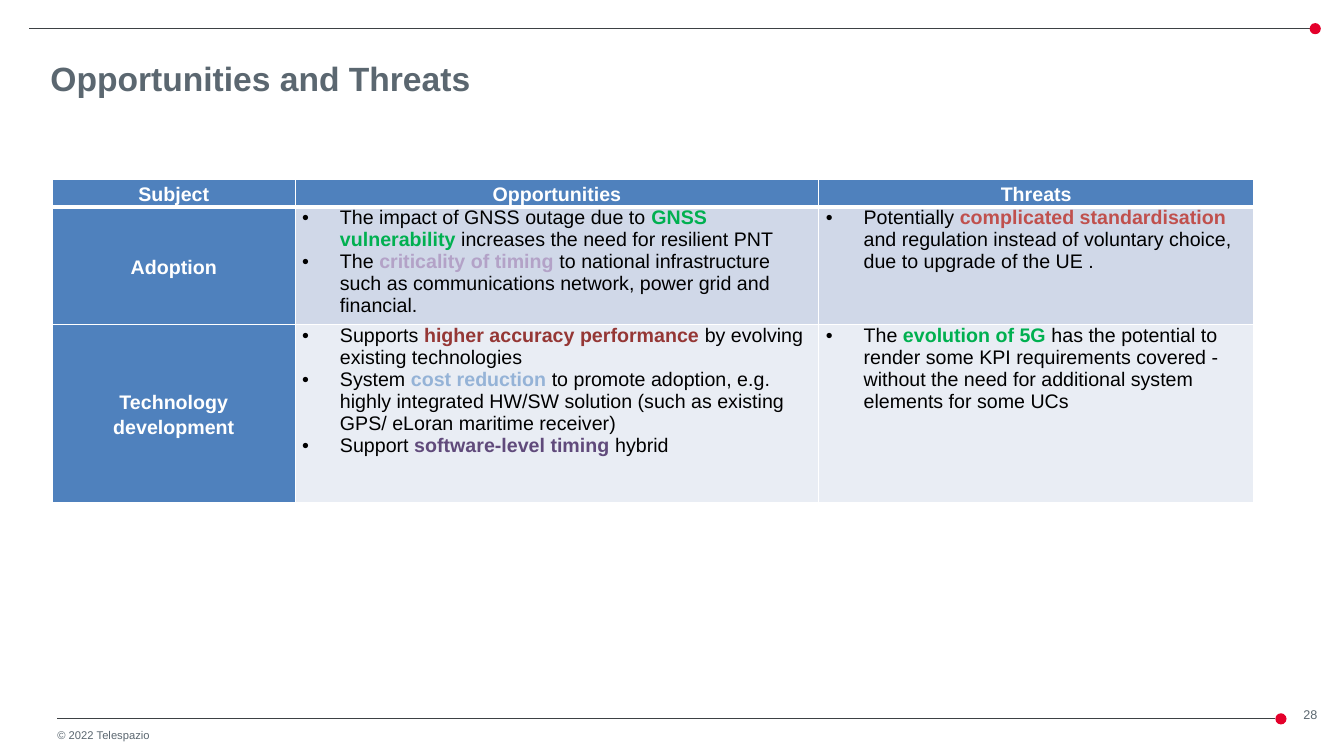
import pptx
import pptx.util
import pptx.dml.color
import pptx.enum.shapes
import pptx.enum.text
import pptx.oxml
import pptx.oxml.ns

Pt = pptx.util.Pt
ALIGN = pptx.enum.text.PP_ALIGN
ANCHOR = pptx.enum.text.MSO_ANCHOR
FONT = "Arial"
COLORS = {
    "grey": "5B6770", "rule": "3D4144", "dot": "E4002B", "white": "FFFFFF",
    "black": "000000", "header": "4F81BD", "band1": "D0D8E8", "band2": "E9EDF4",
    "green": "00B050", "lilac": "B3A2C7", "red": "C0504D", "maroon": "953735",
    "sky": "95B3D7", "purple": "604A7B",
}
DOT = 8
BULLET_INDENT = 27

HEADINGS = ["Subject", "Opportunities", "Threats"]
# Each bullet: text before, highlighted words, highlight colour, text after
SUBJECTS = [
    ("Adoption", "band1", 6, [
        [("The impact of GNSS outage due to ", "GNSS vulnerability", "green",
          " increases the need for resilient PNT"),
         ("The ", "criticality of timing ", "lilac",
          "to national infrastructure such as communications network, power grid and financial.")],
        [("Potentially ", "complicated standardisation ", "red",
          "and regulation instead of voluntary choice, due to upgrade of the UE .")],
    ]),
    ("Technology development", "band2", 10, [
        [("Supports ", "higher accuracy performance ", "maroon",
          "by evolving existing technologies"),
         ("System ", "cost reduction ", "sky",
          "to promote adoption, e.g. highly integrated HW/SW solution "
          "(such as existing GPS/ eLoran maritime receiver)"),
         ("Support ", "software-level timing ", "purple", "hybrid")],
        [("The ", "evolution of 5G ", "green",
          "has the potential to render some KPI requirements covered - "
          "without the need for additional system elements for some UCs")],
    ]),
]


def rgb(name):
    return pptx.dml.color.RGBColor.from_string(COLORS[name])


def add_run(paragraph, text, size, color, bold=False):
    run = paragraph.add_run()
    run.text = text
    run.font.name = FONT
    run.font.size = Pt(size)
    run.font.bold = bold
    run.font.color.rgb = rgb(color)


def add_rule(slide, left, middle, width):
    """Thin rule that ends in a red dot; width includes the dot."""
    line = slide.shapes.add_connector(
        pptx.enum.shapes.MSO_CONNECTOR.STRAIGHT,
        Pt(left), Pt(middle), Pt(left + width - DOT), Pt(middle))
    line.line.color.rgb = rgb("rule")
    line.line.width = Pt(0.75)
    line._element.spPr.append(pptx.oxml.parse_xml(
        f"<a:effectLst {pptx.oxml.ns.nsdecls('a')}/>"))
    dot = slide.shapes.add_shape(
        pptx.enum.shapes.MSO_SHAPE.OVAL,
        Pt(left + width - DOT), Pt(middle - DOT / 2), Pt(DOT), Pt(DOT))
    dot.shadow.inherit = False
    dot.fill.solid()
    dot.fill.fore_color.rgb = rgb("dot")
    dot.line.fill.background()


def add_label(slide, left, top, width, height, text, size, align):
    frame = slide.shapes.add_textbox(Pt(left), Pt(top), Pt(width), Pt(height)).text_frame
    frame.word_wrap = True
    frame.margin_left = frame.margin_right = frame.margin_top = frame.margin_bottom = 0
    frame.paragraphs[0].alignment = align
    add_run(frame.paragraphs[0], text, size, "grey")


def add_footer(slide, left, top, width):
    add_rule(slide, left, top, width)
    add_label(slide, left, top + 6.5, 166, 9.5, "© 2022 Telespazio", 8, ALIGN.LEFT)
    add_label(slide, left + width + 1.5, top - 8.5, 31, 11.5, "28", 9, ALIGN.CENTER)


def add_title(slide, left, top, width, height):
    title = slide.shapes.title
    title.left, title.top, title.width, title.height = Pt(left), Pt(top), Pt(width), Pt(height)
    frame = title.text_frame
    frame.word_wrap = False
    frame.auto_size = pptx.enum.text.MSO_AUTO_SIZE.NONE
    frame.vertical_anchor = ANCHOR.TOP
    frame.paragraphs[0].alignment = ALIGN.LEFT
    add_run(frame.paragraphs[0], "Opportunities and Threats", 24, "grey", True)


def format_cell(cell, fill, anchor, top_border, bottom_border):
    cell.margin_left = cell.margin_right = Pt(5)
    cell.margin_top = cell.margin_bottom = 0
    cell.vertical_anchor = anchor
    properties = cell._tc.get_or_add_tcPr()
    for side, width in (("L", 1), ("R", 1), ("T", top_border), ("B", bottom_border)):
        properties.append(pptx.oxml.parse_xml(
            f"<a:ln{side} {pptx.oxml.ns.nsdecls('a')} w='{Pt(width)}'><a:solidFill>"
            f"<a:srgbClr val='{COLORS['white']}'/></a:solidFill></a:ln{side}>"))
    cell.fill.solid()
    cell.fill.fore_color.rgb = rgb(fill)


def fill_heading(cell, text, space_after):
    paragraph = cell.text_frame.paragraphs[0]
    paragraph.alignment = ALIGN.CENTER
    paragraph.line_spacing = 1.15
    paragraph.space_after = Pt(space_after)
    add_run(paragraph, text, 14, "white", True)


def fill_bullets(cell, bullets):
    frame = cell.text_frame
    for index, (before, highlight, color, after) in enumerate(bullets):
        paragraph = frame.add_paragraph() if index else frame.paragraphs[0]
        properties = paragraph._p.get_or_add_pPr()
        properties.set("marL", str(Pt(BULLET_INDENT)))
        properties.set("indent", str(-Pt(BULLET_INDENT)))
        for tag in ("buFont typeface='Arial'", "buChar char='•'"):
            properties.append(pptx.oxml.parse_xml(
                f"<a:{tag} {pptx.oxml.ns.nsdecls('a')}/>"))
        add_run(paragraph, before, 14, "black")
        add_run(paragraph, highlight, 14, color, True)
        add_run(paragraph, after, 14, "black")


def add_subject_table(slide, left, top, width, height):
    table = slide.shapes.add_table(
        len(SUBJECTS) + 1, len(HEADINGS), Pt(left), Pt(top), Pt(width), Pt(height)).table
    for column, share in zip(table.columns, (0.202, 0.436, 0.362)):
        column.width = Pt(round(width * share, 2))
    for row, share in zip(table.rows, (0.084, 0.364, 0.552)):
        row.height = Pt(round(height * share, 2))

    # Header row
    for column, heading in enumerate(HEADINGS):
        cell = table.cell(0, column)
        format_cell(cell, "header", ANCHOR.TOP, 1, 3)
        fill_heading(cell, heading, 10)

    # Subject rows
    for row, (subject, band, space_after, columns) in enumerate(SUBJECTS, 1):
        top_border = 3 if row == 1 else 1
        format_cell(table.cell(row, 0), "header", ANCHOR.MIDDLE, top_border, 1)
        fill_heading(table.cell(row, 0), subject, space_after)
        for column, bullets in enumerate(columns, 1):
            format_cell(table.cell(row, column), band, ANCHOR.TOP, top_border, 1)
            fill_bullets(table.cell(row, column), bullets)


def main():
    presentation = pptx.Presentation()
    presentation.slide_width, presentation.slide_height = Pt(960), Pt(540)
    slide = presentation.slides.add_slide(presentation.slide_layouts[5])
    add_rule(slide, 21, 20.5, 922.5)
    add_footer(slide, 41, 513.5, 878)
    add_title(slide, 28.8, 37.5, 317.5, 36)
    add_subject_table(slide, 37.5, 128.5, 858, 230)
    presentation.save("out.pptx")


if __name__ == "__main__":
    main()
